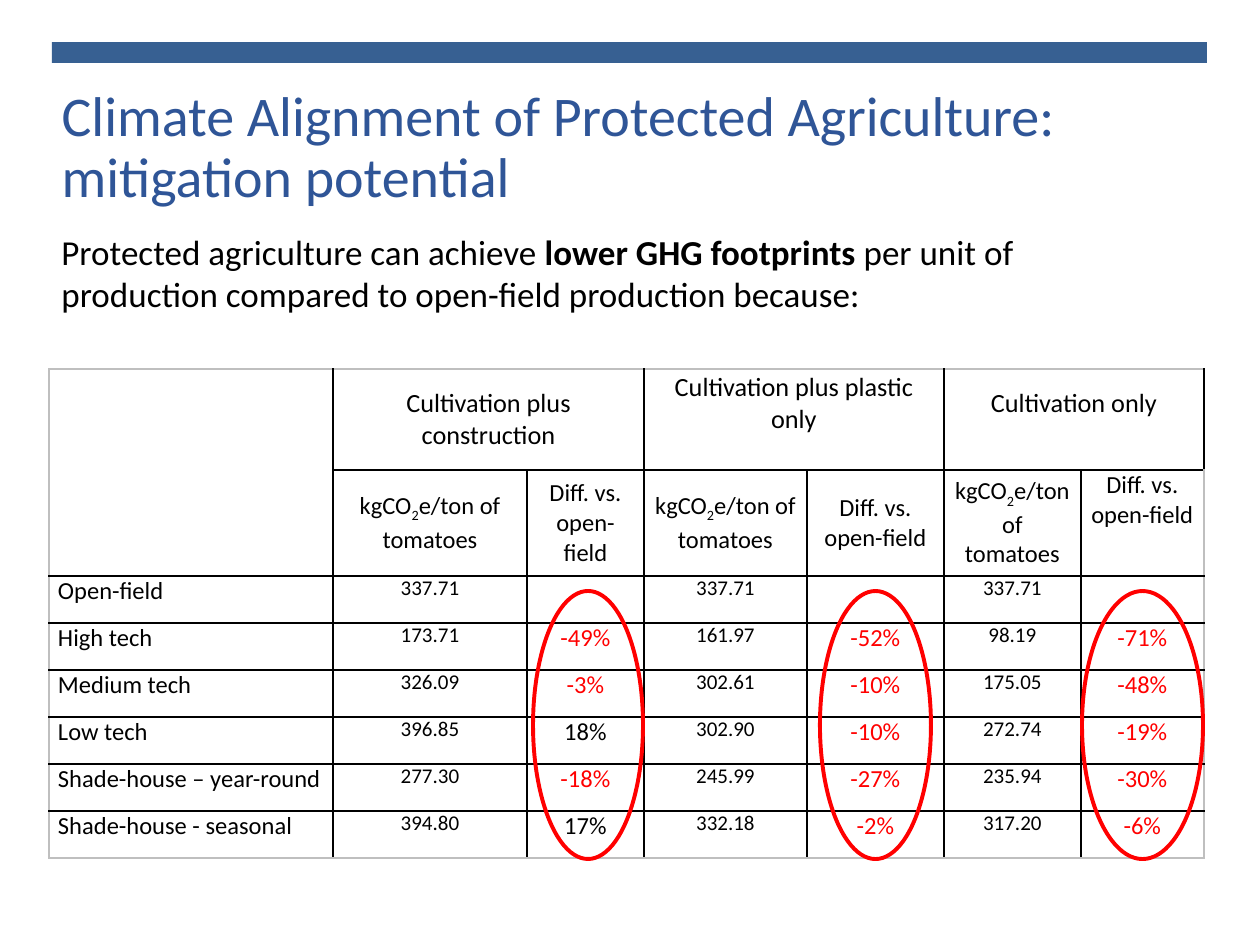
import dataclasses

import lxml.etree
import pptx
import pptx.dml.color
import pptx.enum.shapes
import pptx.enum.text
import pptx.oxml.ns
import pptx.util

SHAPES = pptx.enum.shapes.MSO_SHAPE
ANCHOR = pptx.enum.text.MSO_ANCHOR
ALIGN = pptx.enum.text.PP_ALIGN


@dataclasses.dataclass(frozen=True)
class Theme:
    """Colours, font and type sizes of the slide."""

    font: str = "Calibri"
    bar: str = "376092"
    title: str = "2F5597"
    text: str = "000000"
    accent: str = "FF0000"
    frame: str = "BFBFBF"
    title_size: int = 32
    intro_size: int = 20
    group_size: int = 15
    label_size: int = 14
    value_size: int = 12
    border_width: int = 1
    ring_width: float = 2.25


THEME = Theme()
COLUMNS = [284, 194, 117, 163, 137, 137, 123]
ROWS = [101, 106] + [47] * 6
GROUPS = [
    ("Cultivation plus construction", 0),
    ("Cultivation plus plastic only", 32),
    ("Cultivation only", 32),
]
RECORDS = [
    ("Open-field", "337.71", "", "337.71", "", "337.71", ""),
    ("High tech", "173.71", "-49%", "161.97", "-52%", "98.19", "-71%"),
    ("Medium tech", "326.09", "-3%", "302.61", "-10%", "175.05", "-48%"),
    ("Low tech", "396.85", "18%", "302.90", "-10%", "272.74", "-19%"),
    ("Shade-house – year-round", "277.30", "-18%", "245.99", "-27%", "235.94", "-30%"),
    ("Shade-house - seasonal", "394.80", "17%", "332.18", "-2%", "317.20", "-6%"),
]
RINGS = [(533, 110), (820, 111), (1082, 121)]


def px(length):
    """Turn pixels at 126 to the inch into EMU."""
    return pptx.util.Emu(round(length * 914400 / 126))


def rgb(colour):
    """Turn a hex string into a colour."""
    return pptx.dml.color.RGBColor.from_string(colour)


def write(para, parts, size, colour=THEME.text, align=ALIGN.LEFT):
    """Fill a paragraph with runs, each a text with an optional style."""
    para.alignment = align
    for text, style in parts:
        span = para.add_run()
        span.text = text
        span.font.name = THEME.font
        span.font.size = pptx.util.Pt(size)
        span.font.bold = style == "bold"
        span.font.color.rgb = rgb(colour)
        if style == "subscript":
            span.font._element.set("baseline", "-25000")


def add_outline(page, kind, area, fill=None, line=None):
    """Add a preset shape with either a fill or a line."""
    shape = page.shapes.add_shape(kind, *map(px, area))
    shape.shadow.inherit = False
    if fill:
        shape.fill.solid()
        shape.fill.fore_color.rgb = rgb(fill)
    else:
        shape.fill.background()
    if line:
        shape.line.color.rgb = rgb(line)
        shape.line.width = pptx.util.Pt(THEME.ring_width)
    else:
        shape.line.fill.background()


def add_title(page, text):
    """Place and format the title placeholder."""
    box = page.shapes.title
    box.left, box.top, box.width, box.height = map(px, (49, 82, 1155, 73))
    frame = box.text_frame
    frame.word_wrap = True
    frame.auto_size = pptx.enum.text.MSO_AUTO_SIZE.NONE
    frame.vertical_anchor = ANCHOR.TOP
    para = frame.paragraphs[0]
    para.line_spacing = 0.9
    write(para, [(text, "")], THEME.title_size, THEME.title)


def add_intro(page, parts):
    """Add the introductory sentence."""
    frame = page.shapes.add_textbox(*map(px, (49, 224, 1129, 251))).text_frame
    frame.word_wrap = True
    write(frame.paragraphs[0], parts, THEME.intro_size)


def set_borders(cell, row, column):
    """Draw grey borders on the table frame and black ones inside."""
    edges = {
        "lnL": column == 0,
        "lnR": column == len(COLUMNS) - 1,
        "lnT": row == 0,
        "lnB": row == len(ROWS) - 1,
    }
    properties = cell._tc.get_or_add_tcPr()
    qn = pptx.oxml.ns.qn
    for place, (tag, outer) in enumerate(edges.items()):
        width = str(pptx.util.Pt(THEME.border_width))
        line = lxml.etree.Element(qn(f"a:{tag}"), w=width)
        fill = lxml.etree.SubElement(line, qn("a:solidFill"))
        colour = THEME.frame if outer else THEME.text
        lxml.etree.SubElement(fill, qn("a:srgbClr"), val=colour)
        properties.insert(place, line)


def fill_cell(cell, parts, size, anchor=ANCHOR.TOP, **style):
    """Write one anchored paragraph into a table cell."""
    cell.vertical_anchor = anchor
    write(cell.text_frame.paragraphs[0], parts, size, **style)


def fill_header(table):
    """Write the two header rows with their merged cells."""
    table.cell(0, 0).merge(table.cell(1, 0))
    unit = [("kgCO", ""), ("2", "subscript"), ("e/ton of tomatoes", "")]
    difference = [("Diff. vs. open-field", "")]
    for number, (group, lift) in enumerate(GROUPS):
        column = 1 + 2 * number
        cell = table.cell(0, column)
        cell.merge(table.cell(0, column + 1))
        cell.margin_bottom = px(lift)
        fill_cell(cell, [(group, "")], THEME.group_size, ANCHOR.MIDDLE, align=ALIGN.CENTER)
        last = number == len(GROUPS) - 1
        anchors = (ANCHOR.MIDDLE, ANCHOR.TOP if last else ANCHOR.MIDDLE)
        for offset, parts in enumerate((unit, difference)):
            fill_cell(table.cell(1, column + offset), parts, THEME.label_size,
                      anchors[offset], align=ALIGN.CENTER)


def fill_records(table):
    """Write the data rows, with negative differences in the accent colour."""
    for row, record in enumerate(RECORDS, start=2):
        for column, text in enumerate(record):
            if not text:
                continue
            is_value = column % 2 == 1
            fill_cell(
                table.cell(row, column),
                [(text, "")],
                THEME.value_size if is_value else THEME.label_size,
                colour=THEME.accent if text.startswith("-") else THEME.text,
                align=ALIGN.CENTER if column else ALIGN.LEFT,
            )


def add_footprint_table(page):
    """Add the table of footprints by technology."""
    area = map(px, (49, 369, sum(COLUMNS), sum(ROWS)))
    table = page.shapes.add_table(len(ROWS), len(COLUMNS), *area).table
    table.first_row = table.horz_banding = False
    for column, width in zip(table.columns, COLUMNS):
        column.width = px(width)
    for index, height in enumerate(ROWS):
        table.rows[index].height = px(height)
        for column in range(len(COLUMNS)):
            cell = table.cell(index, column)
            cell.margin_left = cell.margin_right = px(9)
            cell.margin_top = cell.margin_bottom = 0
            cell.fill.background()
            set_borders(cell, index, column)
    fill_header(table)
    fill_records(table)


def main():
    """Build the slide and save it."""
    deck = pptx.Presentation()
    deck.slide_width, deck.slide_height = px(1260), px(945)
    page = deck.slides.add_slide(deck.slide_layouts.get_by_name("Title Only"))
    add_outline(page, SHAPES.RECTANGLE, (52, 42, 1155, 21), fill=THEME.bar)
    add_title(page, "Climate Alignment of Protected Agriculture: mitigation potential")
    add_intro(page, [
        ("Protected agriculture can achieve ", ""),
        ("lower GHG footprints ", "bold"),
        ("per unit of production compared to open-field production because:", ""),
    ])
    add_footprint_table(page)
    for left, width in RINGS:
        add_outline(page, SHAPES.OVAL, (left, 591, width, 268), line=THEME.accent)
    deck.save("out.pptx")


if __name__ == "__main__":
    main()
